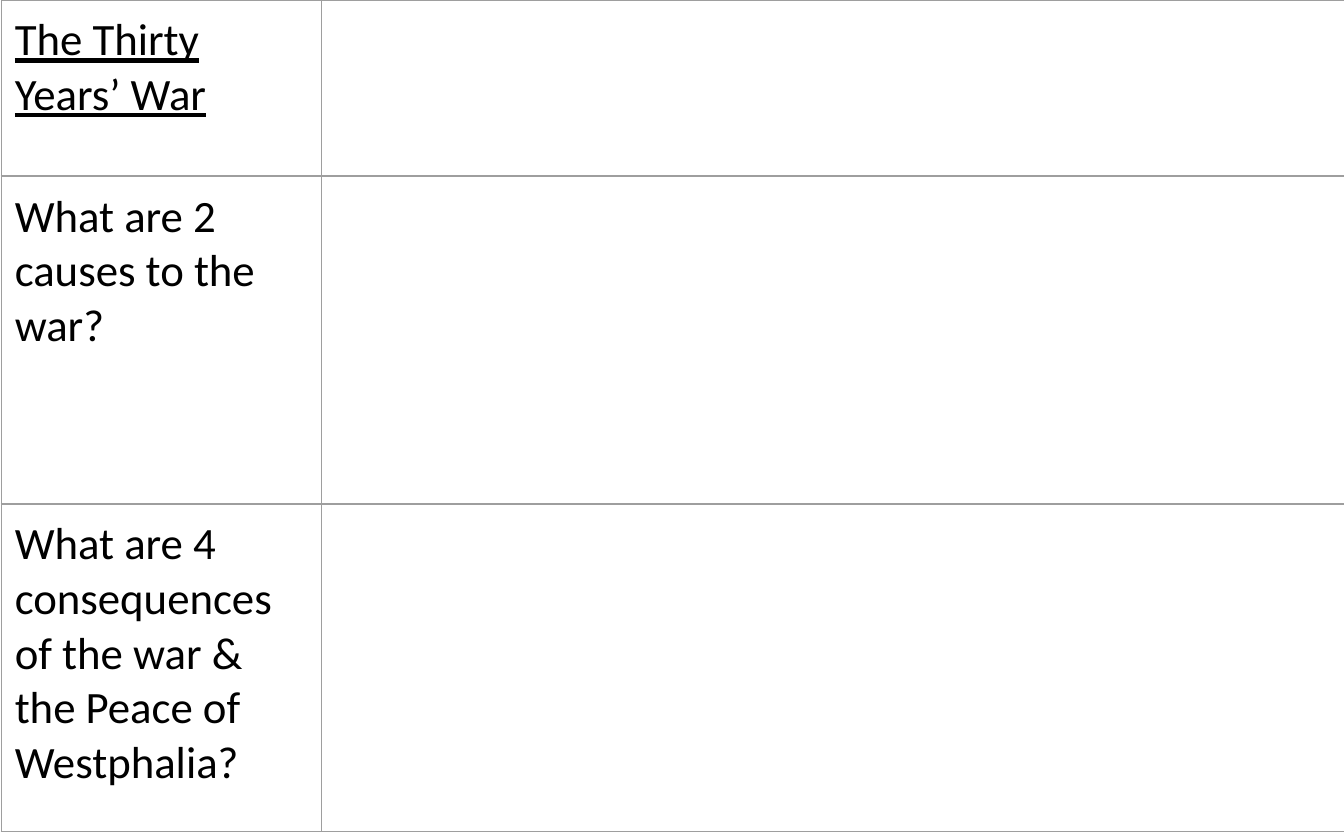
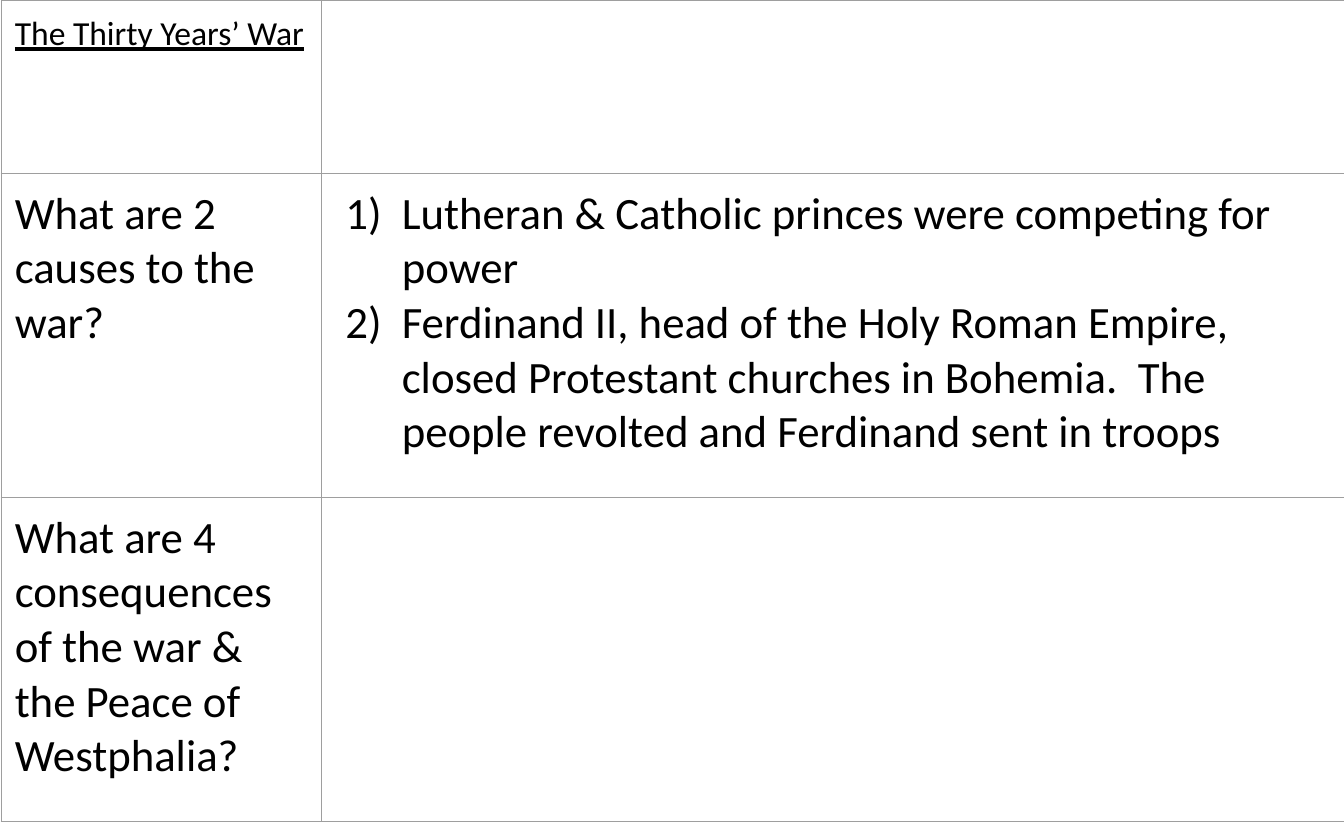
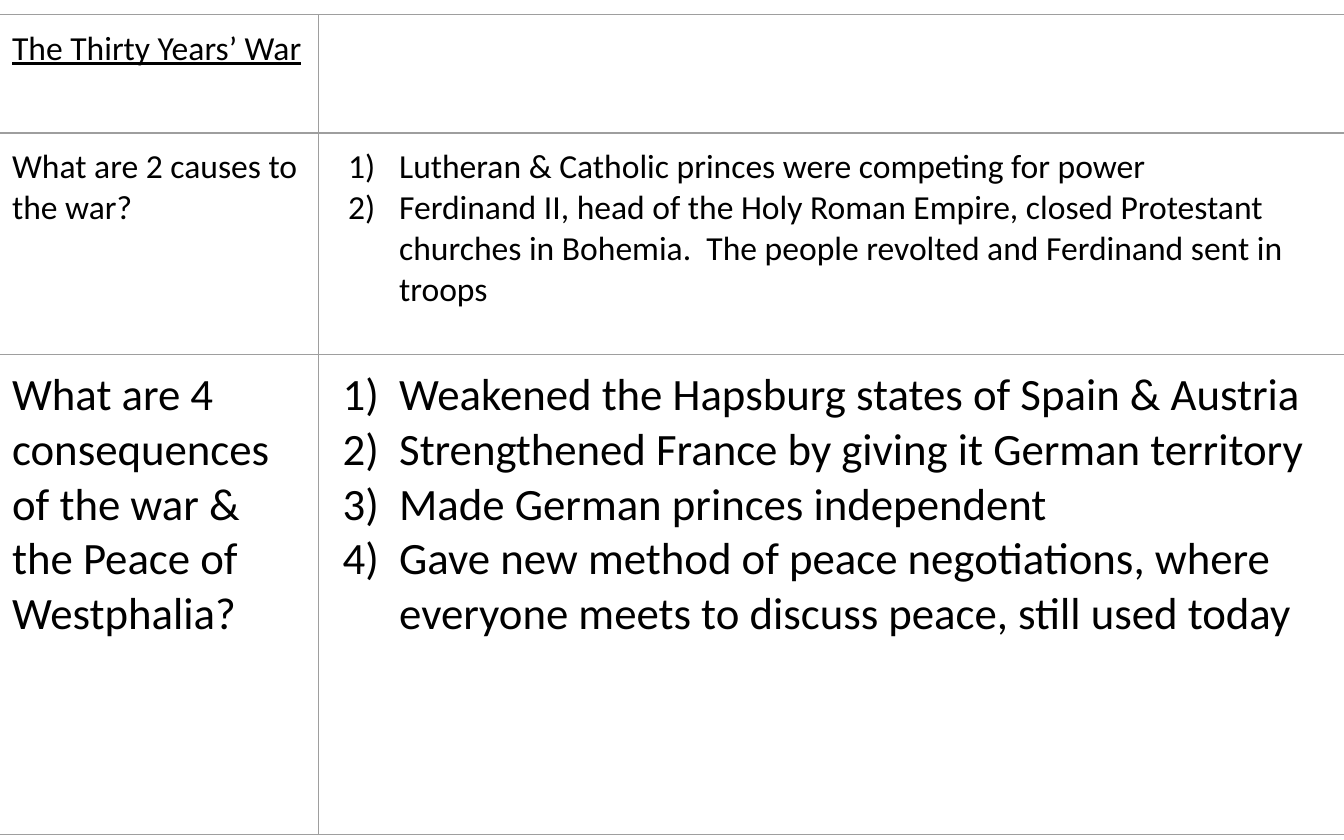
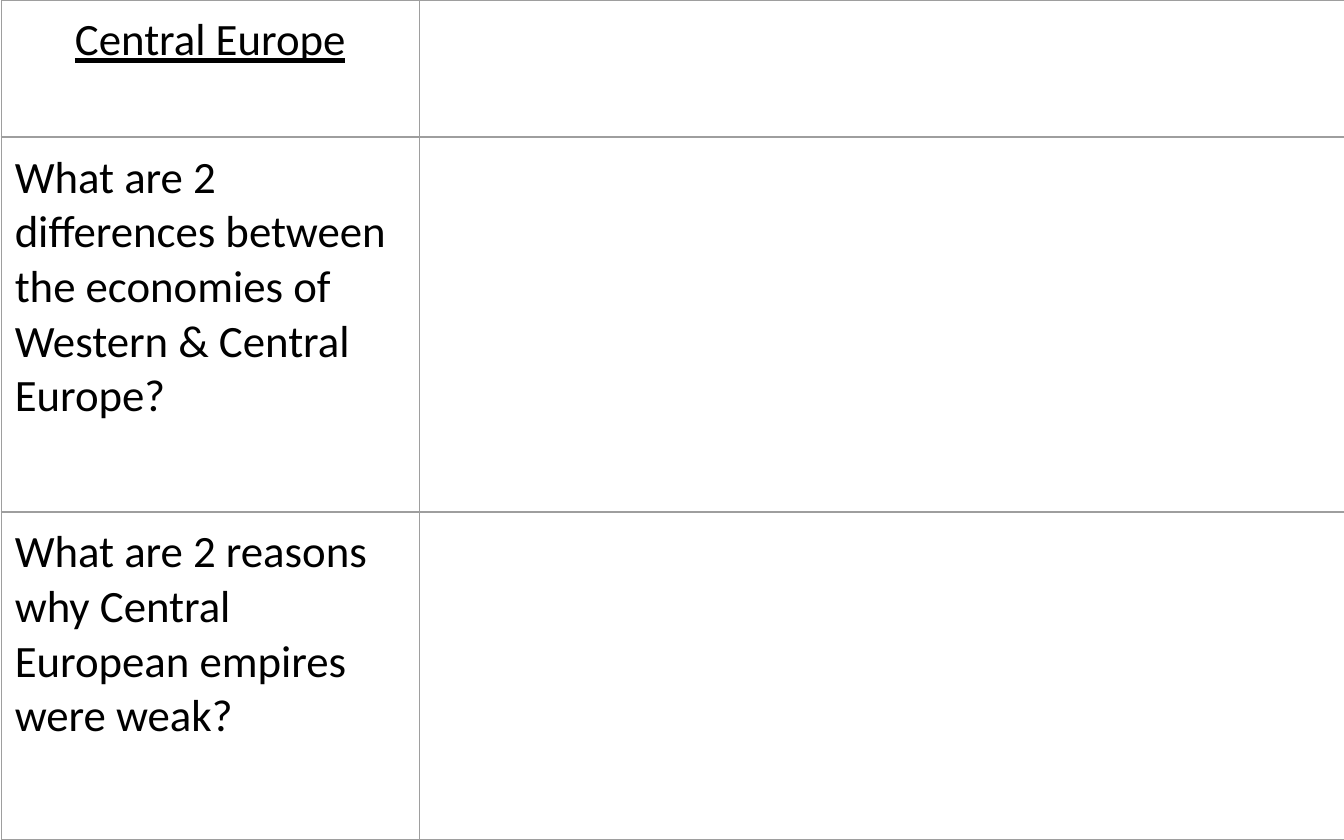
from lxml import etree
from pptx import Presentation
from pptx.dml.color import RGBColor
from pptx.enum.text import MSO_ANCHOR, PP_ALIGN
from pptx.oxml.ns import qn
from pptx.util import Inches, Pt

# Shared style
BLACK = RGBColor(0x00, 0x00, 0x00)
GRID_GREY = RGBColor(0x9E, 0x9E, 0x9E)
FONT = "Calibri"
LARGE, SMALL = 24, 18
HANGING = {LARGE: 0.42, SMALL: 0.38}
TOP, LEFT, CENTER = MSO_ANCHOR.TOP, PP_ALIGN.LEFT, PP_ALIGN.CENTER

# Repeated content
WAR_TITLE = "The Thirty Years’ War"
CAUSES_QUESTION = "What are 2 causes to the war?"
CONSEQUENCES_QUESTION = (
    "What are 4 consequences of the war & the Peace of Westphalia?")
CAUSES = [
    "Lutheran & Catholic princes were competing for power",
    "Ferdinand II, head of the Holy Roman Empire, closed Protestant churches "
    "in Bohemia.  The people revolted and Ferdinand sent in troops",
]
CONSEQUENCES = [
    "Weakened the Hapsburg states of Spain & Austria",
    "Strengthened France by giving it German territory",
    "Made German princes independent",
    "Gave new method of peace negotiations, where everyone meets to discuss "
    "peace, still used today",
]
WAR_COLUMNS = (2.38, 7.64)
EUROPE_COLUMNS = (3.11, 6.9)


def style_cell(cell):
    """Clear fill, even margins and a thin grey border on every side."""
    cell.fill.background()
    cell.vertical_anchor = TOP
    cell.margin_left = cell.margin_right = Inches(0.1)
    cell.margin_top = cell.margin_bottom = Inches(0.1)
    properties = cell._tc.get_or_add_tcPr()
    for position, side in enumerate(("lnL", "lnR", "lnT", "lnB")):
        border = etree.Element(qn(f"a:{side}"), w=str(Pt(0.75)))
        fill = etree.SubElement(border, qn("a:solidFill"))
        etree.SubElement(fill, qn("a:srgbClr"), val=str(GRID_GREY))
        properties.insert(position, border)


def format_paragraph(paragraph, size, underline=False):
    for run in paragraph.runs:
        run.font.name = FONT
        run.font.size = Pt(size)
        run.font.color.rgb = BLACK
        run.font.underline = underline


def write_prompt(cell, text, size, underline=False, align=LEFT):
    cell.text_frame.text = text
    paragraph = cell.text_frame.paragraphs[0]
    paragraph.alignment = align
    format_paragraph(paragraph, size, underline)


def write_answers(cell, answers, size):
    """Numbered list in the form 1), 2), ... with a hanging indent."""
    cell.text_frame.text = "\n".join(answers)
    for paragraph in cell.text_frame.paragraphs:
        format_paragraph(paragraph, size)
        properties = paragraph._p.get_or_add_pPr()
        properties.set("marL", str(Inches(0.5)))
        properties.set("indent", str(-Inches(HANGING[size])))
        font = etree.SubElement(properties, qn("a:buFont"))
        font.set("typeface", FONT)
        etree.SubElement(properties, qn("a:buAutoNum"), type="arabicParenR")


def add_notes_slide(deck, title, questions, columns, heights,
                    title_size=LARGE, title_align=LEFT, left=0.01, top=0):
    """Notes grid: a title row, then (question, answers, size) rows."""
    slide = deck.slides.add_slide(deck.slide_layouts[6])
    grid = slide.shapes.add_table(
        len(heights), len(columns), Inches(left), Inches(top),
        Inches(sum(columns)), Inches(sum(heights))).table
    grid.first_row = grid.horz_banding = False
    for column, width in zip(grid.columns, columns):
        column.width = Inches(width)
    for row, height in zip(grid.rows, heights):
        row.height = Inches(height)
    for cell in grid.iter_cells():
        style_cell(cell)

    write_prompt(grid.cell(0, 0), title, title_size, True, title_align)
    for row, (question, answers, size) in enumerate(questions, start=1):
        write_prompt(grid.cell(row, 0), question, size)
        if answers:
            write_answers(grid.cell(row, 1), answers, size)


def main():
    deck = Presentation()
    deck.slide_width, deck.slide_height = Inches(10), Inches(6.25)

    # Thirty Years' War: questions only
    add_notes_slide(
        deck, WAR_TITLE,
        [(CAUSES_QUESTION, [], LARGE), (CONSEQUENCES_QUESTION, [], LARGE)],
        WAR_COLUMNS, (1.31, 2.44, 2.44))

    # Causes answered
    add_notes_slide(
        deck, WAR_TITLE,
        [(CAUSES_QUESTION, CAUSES, LARGE), (CONSEQUENCES_QUESTION, [], LARGE)],
        WAR_COLUMNS, (1.29, 2.41, 2.41), title_size=SMALL)

    # Consequences answered
    add_notes_slide(
        deck, WAR_TITLE,
        [(CAUSES_QUESTION, CAUSES, SMALL),
         (CONSEQUENCES_QUESTION, CONSEQUENCES, LARGE)],
        WAR_COLUMNS, (0.88, 1.65, 3.57), title_size=SMALL,
        left=-0.01, top=0.11)

    # Central Europe: questions only
    add_notes_slide(
        deck, "Central Europe",
        [("What are 2 differences between the economies of Western & "
          "Central Europe?", [], LARGE),
         ("What are 2 reasons why Central European empires were weak?",
          [], LARGE)],
        EUROPE_COLUMNS, (1.02, 2.79, 2.44), title_align=CENTER)

    deck.save("out.pptx")


if __name__ == "__main__":
    main()
